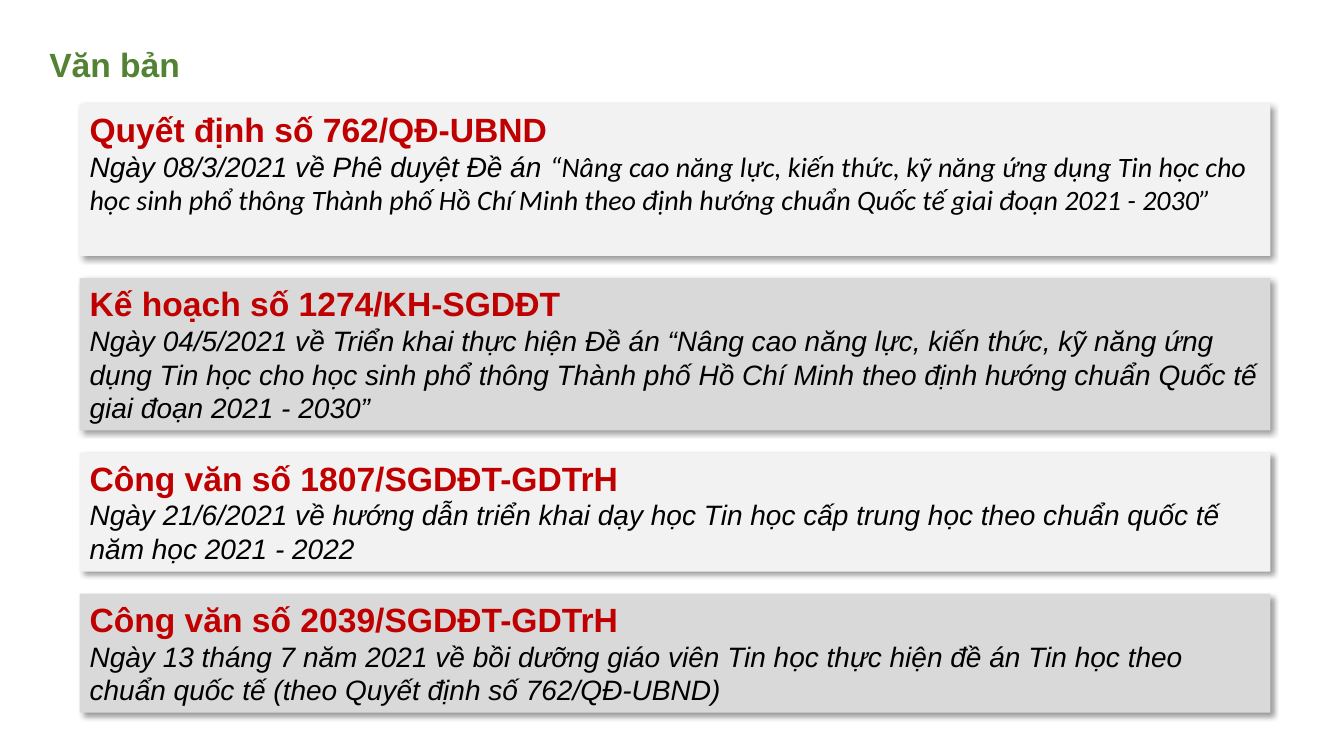
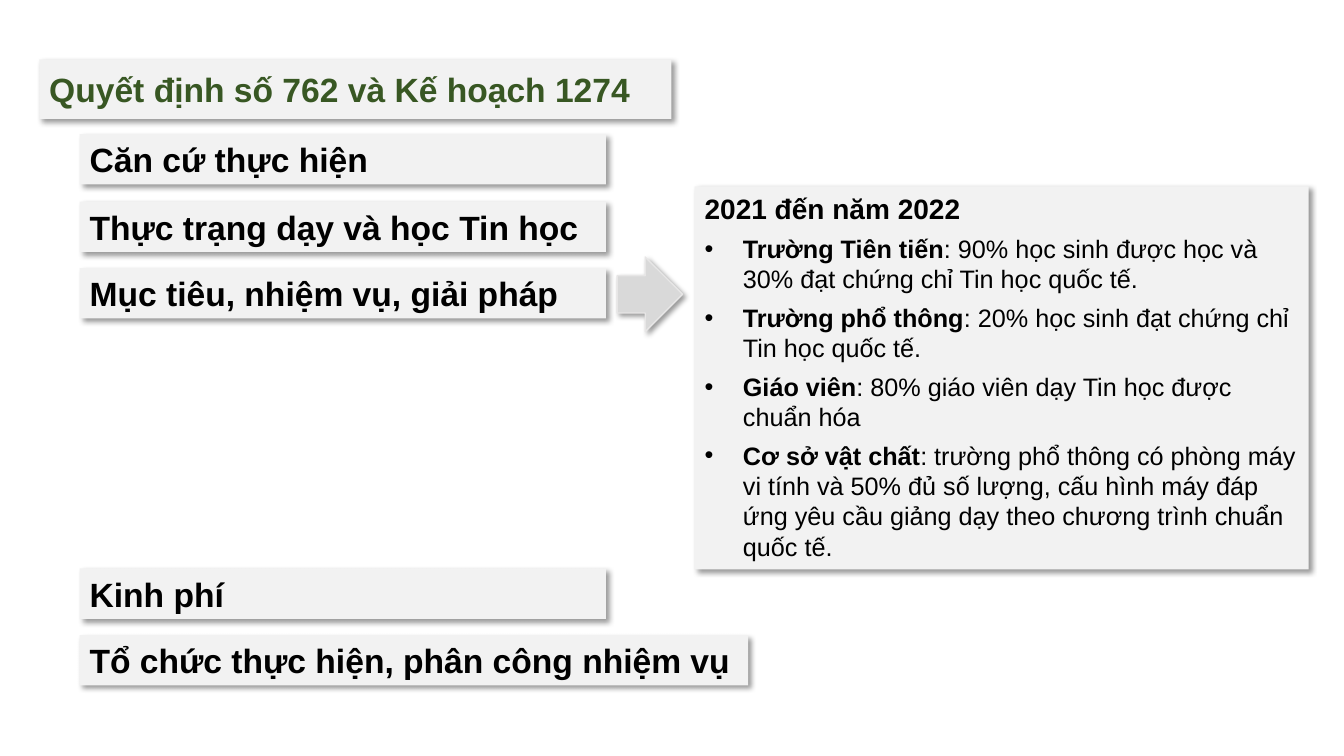
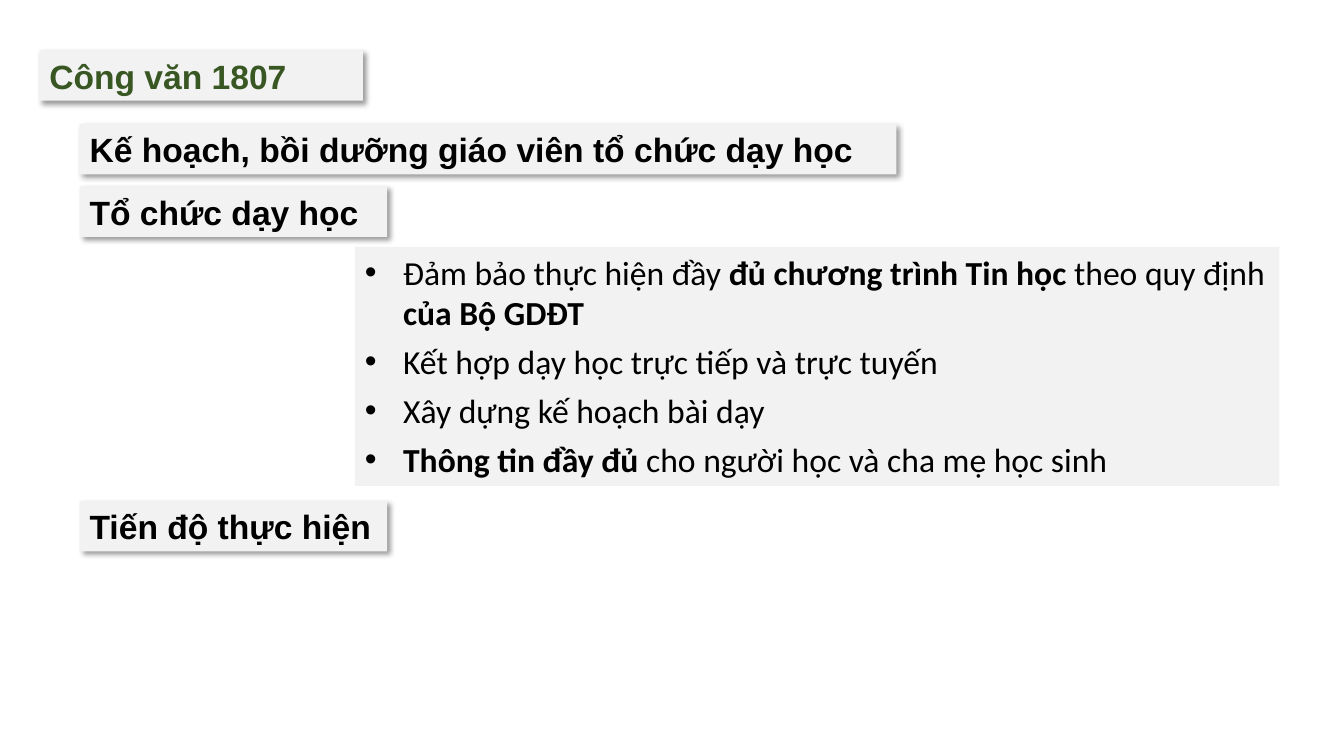
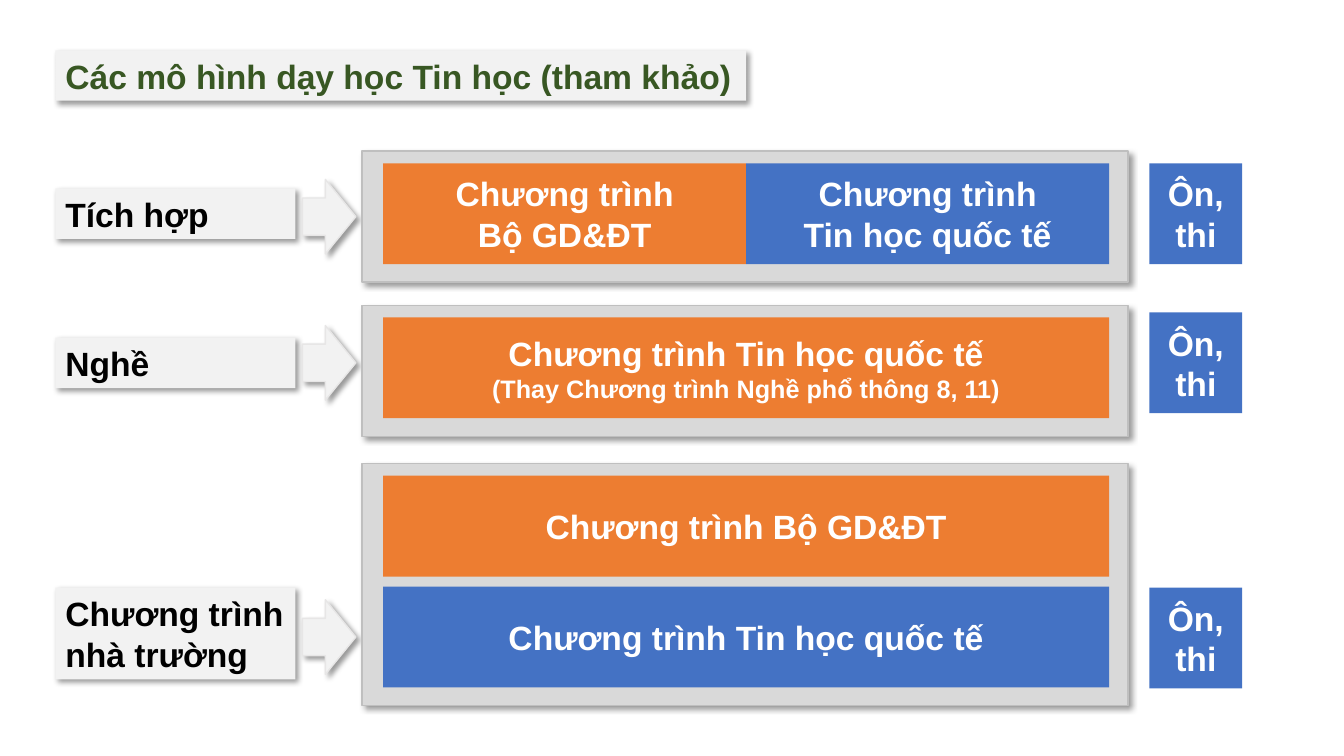
"""Build four slides on documents and models for teaching Informatics."""
from dataclasses import dataclass

from lxml.etree import SubElement
from pptx import Presentation
from pptx.dml.color import RGBColor
from pptx.enum.shapes import MSO_SHAPE
from pptx.enum.text import MSO_ANCHOR, MSO_AUTO_SIZE, PP_ALIGN
from pptx.oxml.ns import qn
from pptx.util import Inches, Pt


@dataclass(frozen=True)
class Theme:
    """Colours, fonts and type sizes shared by the slides."""

    black: str = "000000"
    white: str = "FFFFFF"
    light: str = "F2F2F2"
    grey: str = "D9D9D9"
    panel_line: str = "BFBFBF"
    arrow_line: str = "E7E6E6"
    red: str = "C00000"
    green: str = "548235"
    dark_green: str = "385723"
    orange: str = "ED7D31"
    blue: str = "4472C4"
    font: str = "Arial"
    second_font: str = "Calibri"
    heading: int = 24
    body: int = 20
    detail: int = 18


THEME = Theme()


def write(shape, text, size=THEME.heading, color=THEME.black, font=THEME.font, bold=False,
          italic=False, align=PP_ALIGN.LEFT, bullet=False, same_line=False):
    """Add text to a shape as a new paragraph, or as a run on the last line."""
    frame = shape.text_frame
    paragraph = frame.paragraphs[-1]
    if paragraph.runs and not same_line:
        paragraph = frame.add_paragraph()
    if not same_line:
        paragraph.alignment = align
        if bullet:
            add_bullet(paragraph)
    run = paragraph.add_run()
    run.text = text
    run.font.size = Pt(size)
    run.font.name = font
    run.font.bold = bold
    run.font.italic = italic
    run.font.color.rgb = RGBColor.from_string(color)


def add_bullet(paragraph):
    """Give a paragraph a hanging round bullet and space before it."""
    paragraph.space_before = Pt(6)
    properties = paragraph._p.get_or_add_pPr()
    properties.set("marL", str(Inches(0.38)))
    properties.set("indent", str(Inches(-0.38)))
    SubElement(properties, qn("a:buFont"), typeface=THEME.font)
    SubElement(properties, qn("a:buChar"), char="•")


def write_bullets(shape, bullets, **text_format):
    """Write bullets, each a list of (text, bold) parts."""
    for parts in bullets:
        for index, (text, bold) in enumerate(parts):
            write(shape, text, bold=bold, bullet=True, same_line=index > 0, **text_format)


def add_shadow(shape):
    """Add a soft shadow towards the lower right."""
    effects = shape._element.spPr.find(qn("a:effectLst"))
    shadow = SubElement(effects, qn("a:outerShdw"), blurRad=str(Pt(4)), dist=str(Pt(3)),
                        dir="2700000", algn="tl", rotWithShape="0")
    color = SubElement(shadow, qn("a:srgbClr"), val=THEME.black)
    SubElement(color, qn("a:alpha"), val="40000")


def add_box(slide, left, top, width, height, fill=THEME.light, line=None, shadow=True,
            kind=MSO_SHAPE.RECTANGLE, anchor=MSO_ANCHOR.TOP, grow=True):
    """Add a filled shape ready for text."""
    shape = slide.shapes.add_shape(kind, Inches(left), Inches(top), Inches(width), Inches(height))
    shape.shadow.inherit = False
    shape.fill.solid()
    shape.fill.fore_color.rgb = RGBColor.from_string(fill)
    if line:
        shape.line.color.rgb = RGBColor.from_string(line)
        shape.line.width = Pt(1)
    else:
        shape.line.fill.background()
    if shadow:
        add_shadow(shape)
    frame = shape.text_frame
    frame.word_wrap = True
    frame.vertical_anchor = anchor
    frame.auto_size = MSO_AUTO_SIZE.SHAPE_TO_FIT_TEXT if grow else MSO_AUTO_SIZE.NONE
    return shape


def add_label(slide, text, left, top, width, height=0.5, color=THEME.black, anchor=MSO_ANCHOR.TOP):
    """Add a light box with one bold heading."""
    label = add_box(slide, left, top, width, height, anchor=anchor)
    write(label, text, color=color, bold=True)


def add_title(slide, text, left, top, width, height=0.5):
    """Add the boxed green slide title."""
    add_label(slide, text, left, top, width, height, THEME.dark_green, MSO_ANCHOR.MIDDLE)


def add_arrow(slide, left, top, width, fill=THEME.light):
    """Add a block arrow pointing right."""
    arrow = add_box(slide, left, top, width, 0.74, fill, THEME.arrow_line,
                    kind=MSO_SHAPE.RIGHT_ARROW, grow=False)
    arrow.adjustments[0] = 0.5
    arrow.adjustments[1] = 0.57


def add_block(slide, lines, left, top, width, fill):
    """Add a coloured block of centred (text, size) lines."""
    block = add_box(slide, left, top, width, 1, fill, shadow=False,
                    anchor=MSO_ANCHOR.MIDDLE, grow=False)
    for text, size in lines:
        write(block, text, size=size, color=THEME.white, bold=True, align=PP_ALIGN.CENTER)


def headings(*texts):
    """Pair each text with the heading size."""
    return [(text, THEME.heading) for text in texts]


def add_model(slide, label, label_top, label_height, arrow_top, panel_top, rows, exam_top, exam):
    """Add one teaching model: label, arrow, panel of blocks and exam block."""
    add_label(slide, label, 0.55, label_top, 2.38, label_height, anchor=MSO_ANCHOR.MIDDLE)
    add_arrow(slide, 3, arrow_top, 0.53)
    pitch = 1.1
    add_box(slide, 3.59, panel_top, 7.6, 0.2 + pitch * len(rows), THEME.grey,
            THEME.panel_line, grow=False)
    for row_index, row in enumerate(rows):
        width = 7.2 / len(row)
        for column, (lines, fill) in enumerate(row):
            add_block(slide, lines, 3.8 + column * width, panel_top + 0.12 + row_index * pitch,
                      width, fill)
    add_block(slide, headings(*exam), 11.4, exam_top, 0.92, THEME.blue)


def build_documents(slide):
    """Build the list of documents."""
    title = slide.shapes.add_textbox(Inches(0.39), Inches(0.39), Inches(2.75), Inches(0.5))
    title.text_frame.word_wrap = True
    write(title, "Văn bản", color=THEME.green, bold=True)
    documents = [
        ("Quyết định số 762/QĐ-UBND", 1.51, [
            ("Ngày 08/3/2021 về Phê duyệt Đề án ", THEME.font),
            ("“Nâng cao năng lực, kiến thức, kỹ năng ứng dụng Tin học cho học sinh phổ thông "
             "Thành phố Hồ Chí Minh theo định hướng chuẩn Quốc tế giai đoạn 2021 - 2030”",
             THEME.second_font)]),
        ("Kế hoạch số 1274/KH-SGDĐT", 1.51, [
            ("Ngày 04/5/2021 về Triển khai thực hiện Đề án “Nâng cao năng lực, kiến thức, "
             "kỹ năng ứng dụng Tin học cho học sinh phổ thông Thành phố Hồ Chí Minh theo "
             "định hướng chuẩn Quốc tế giai đoạn 2021 - 2030”", THEME.font)]),
        ("Công văn số 1807/SGDĐT-GDTrH", 1.18, [
            ("Ngày 21/6/2021 về hướng dẫn triển khai dạy học Tin học cấp trung học theo "
             "chuẩn quốc tế năm học 2021 - 2022", THEME.font)]),
        ("Công văn số 2039/SGDĐT-GDTrH", 1.18, [
            ("Ngày 13 tháng 7 năm 2021 về bồi dưỡng giáo viên Tin học thực hiện đề án Tin học "
             "theo chuẩn quốc tế (theo Quyết định số 762/QĐ-UBND)", THEME.font)]),
    ]
    top = 1.03
    for index, (heading, height, parts) in enumerate(documents):
        fill = THEME.grey if index % 2 else THEME.light
        box = add_box(slide, 0.79, top, 11.81, height, fill)
        write(box, heading, color=THEME.red, bold=True)
        for part_index, (text, font) in enumerate(parts):
            write(box, text, size=THEME.body, font=font, italic=True, same_line=part_index > 0)
        top += height + 0.22


def build_decision(slide):
    """Build the contents of the decision and the plan."""
    add_title(slide, "Quyết định số 762 và Kế hoạch 1274", 0.39, 0.59, 6.27, 0.59)
    for text, top, width in [
        ("Căn cứ thực hiện", 1.33, 5.22),
        ("Thực trạng dạy và học Tin học", 2, 5.22),
        ("Mục tiêu, nhiệm vụ, giải pháp", 2.66, 5.22),
        ("Kinh phí", 5.64, 5.22),
        ("Tổ chức thực hiện, phân công nhiệm vụ", 6.3, 6.63),
    ]:
        add_label(slide, text, 0.79, top, width)
    goals = add_box(slide, 6.89, 1.85, 6.09, 3.8)
    write(goals, "2021 đến năm 2022", size=THEME.body, bold=True)
    write_bullets(goals, [
        [("Trường Tiên tiến", True),
         (": 90% học sinh được học và 30% đạt chứng chỉ Tin học quốc tế.", False)],
        [("Trường phổ thông", True),
         (": 20% học sinh đạt chứng chỉ Tin học quốc tế.", False)],
        [("Giáo viên", True), (": 80% giáo viên dạy Tin học được chuẩn hóa", False)],
        [("Cơ sở vật chất", True),
         (": trường phổ thông có phòng máy vi tính và 50% đủ số lượng, cấu hình máy đáp ứng "
          "yêu cầu giảng dạy theo chương trình chuẩn quốc tế.", False)],
    ], size=THEME.detail)
    add_arrow(slide, 6.12, 2.55, 0.65, THEME.grey)


def build_dispatch(slide):
    """Build the contents of the official dispatch."""
    add_title(slide, "Công văn 1807", 0.39, 0.5, 3.21)
    add_label(slide, "Kế hoạch, bồi dưỡng giáo viên tổ chức dạy học", 0.79, 1.23, 8.1)
    teaching = add_box(slide, 3.52, 2.45, 9.17, 2.37, shadow=False)
    write_bullets(teaching, [
        [("Đảm bảo thực hiện đầy ", False), ("đủ chương trình Tin học ", True),
         ("theo quy định ", False), ("của Bộ GDĐT", True)],
        [("Kết hợp dạy học trực tiếp và trực tuyến", False)],
        [("Xây dựng kế hoạch bài dạy", False)],
        [("Thông tin đầy đủ", True), (" cho người học và cha mẹ học sinh", False)],
    ], font=THEME.second_font)
    add_label(slide, "Tổ chức dạy học", 0.79, 1.85, 3.05)
    add_label(slide, "Tiến độ thực hiện", 0.79, 4.97, 3.05)


def build_models(slide):
    """Build the three teaching models."""
    add_title(slide, "Các mô hình dạy học Tin học (tham khảo)", 0.55, 0.5, 6.85)
    international = "Chương trình Tin học quốc tế"
    add_model(slide, "Tích hợp", 1.87, 0.5, 1.78, 1.5, [
        [(headings("Chương trình", "Bộ GD&ĐT"), THEME.orange),
         (headings("Chương trình", "Tin học quốc tế"), THEME.blue)],
    ], 1.62, ["Ôn,", "thi"])
    add_model(slide, "Nghề", 3.35, 0.5, 3.23, 3.03, [
        [([(international, THEME.heading),
           ("(Thay Chương trình Nghề phổ thông 8, 11)", THEME.detail)], THEME.orange)],
    ], 3.1, ["Ôn, thi"])
    add_model(slide, "Chương trình nhà trường", 5.83, 0.91, 5.95, 4.6, [
        [(headings("Chương trình Bộ GD&ĐT"), THEME.orange)],
        [(headings(international), THEME.blue)],
    ], 5.83, ["Ôn, thi"])


def main():
    """Build and save the presentation."""
    presentation = Presentation()
    presentation.slide_width = Inches(13.33)
    presentation.slide_height = Inches(7.5)
    blank = presentation.slide_layouts[6]
    for build in (build_documents, build_decision, build_dispatch, build_models):
        build(presentation.slides.add_slide(blank))
    presentation.save("out.pptx")


if __name__ == "__main__":
    main()
